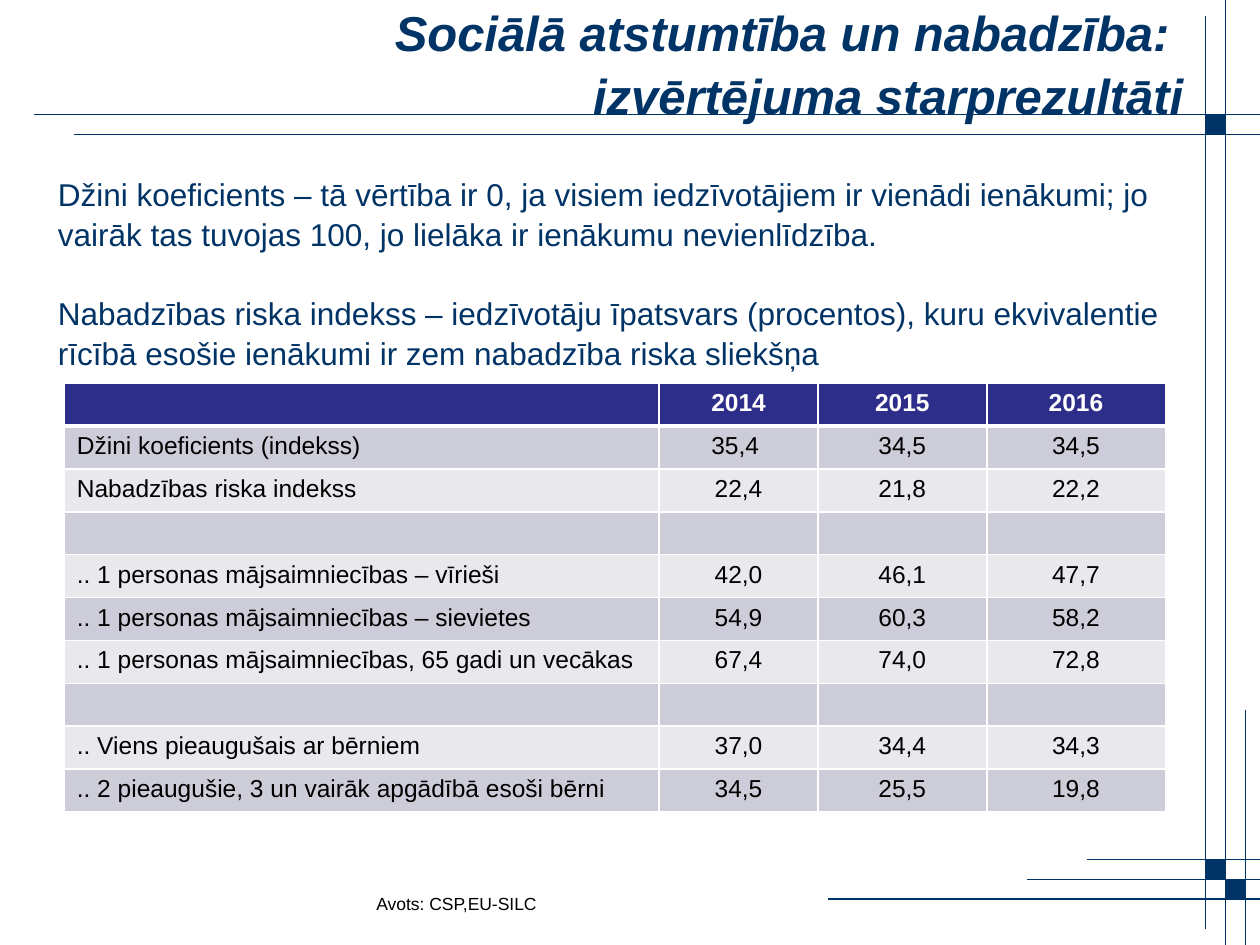
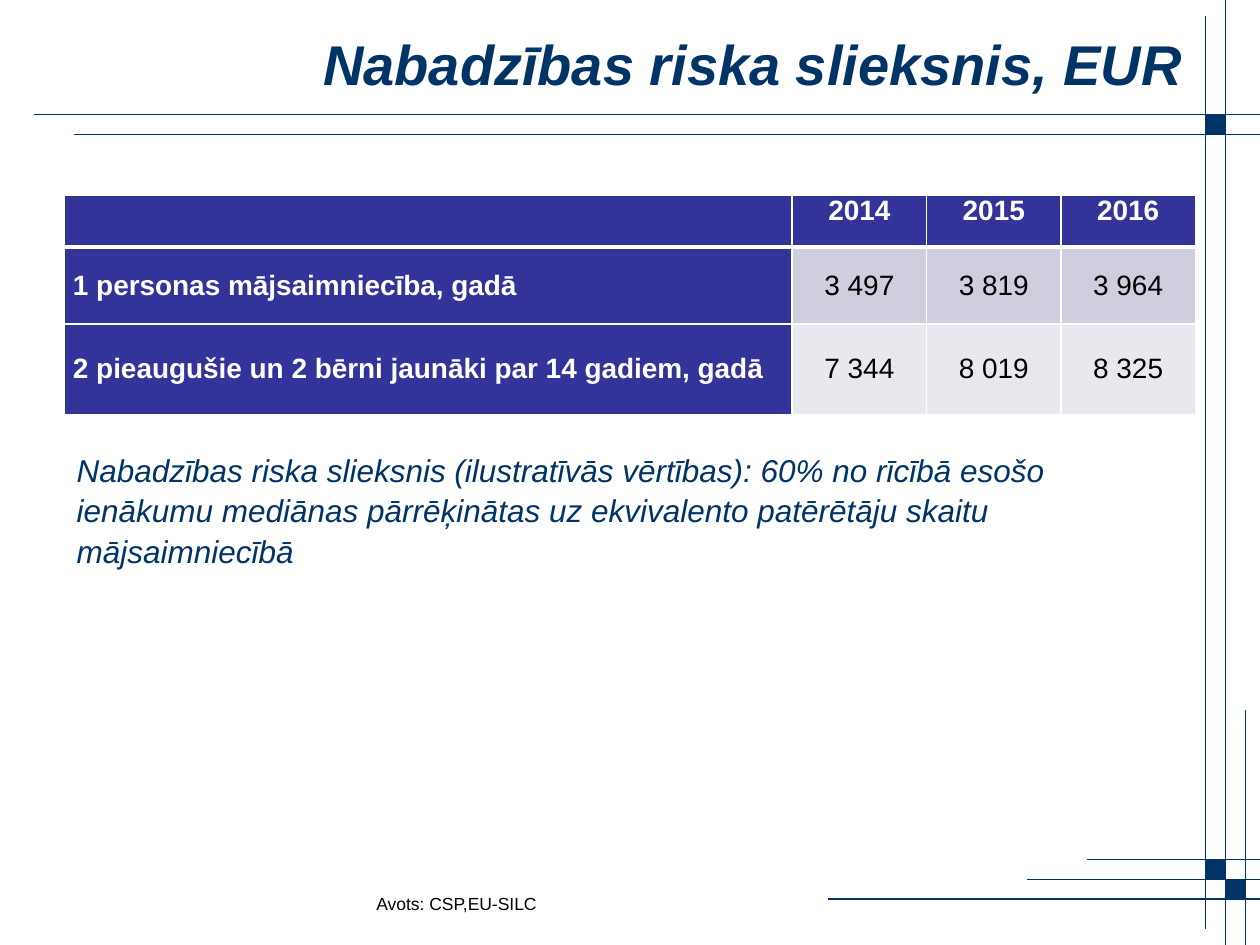
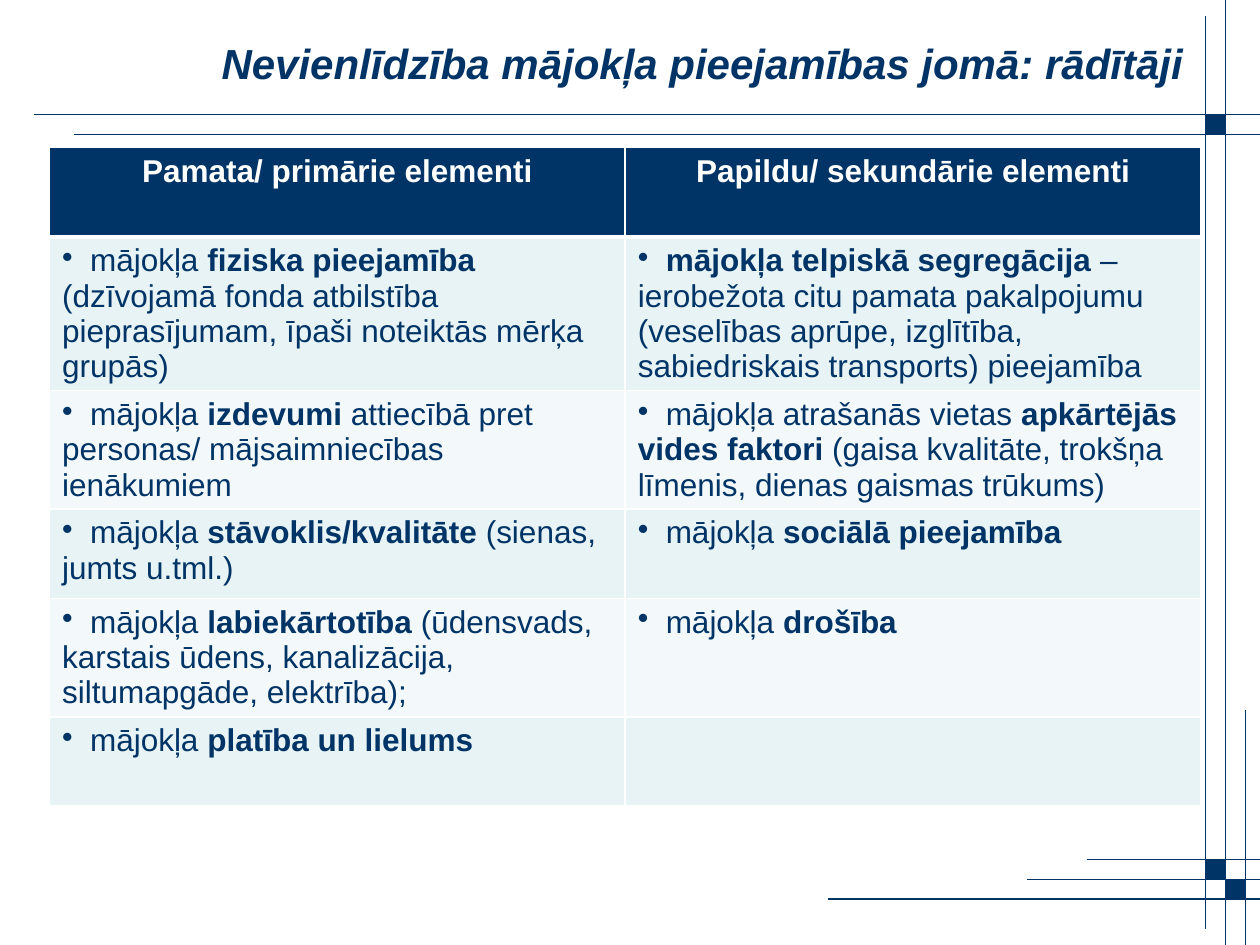
from lxml import etree
from pptx import Presentation
from pptx.dml.color import RGBColor
from pptx.enum.shapes import MSO_CONNECTOR, MSO_SHAPE
from pptx.enum.text import MSO_ANCHOR, MSO_AUTO_SIZE, PP_ALIGN
from pptx.oxml.ns import qn
from pptx.util import Pt

LEFT, CENTER, RIGHT, JUSTIFY = PP_ALIGN.LEFT, PP_ALIGN.CENTER, PP_ALIGN.RIGHT, PP_ALIGN.JUSTIFY
TOP, MIDDLE = MSO_ANCHOR.TOP, MSO_ANCHOR.MIDDLE
STRAIGHT, RECTANGLE = MSO_CONNECTOR.STRAIGHT, MSO_SHAPE.RECTANGLE
NO_AUTOFIT = MSO_AUTO_SIZE.NONE

FONT = "Arial"
NAVY = RGBColor(0x00, 0x33, 0x66)
BLACK = RGBColor(0x00, 0x00, 0x00)
WHITE = RGBColor(0xFF, 0xFF, 0xFF)
INDIGO = RGBColor(0x2D, 0x2D, 0x8A)
VIOLET = RGBColor(0x33, 0x33, 0x99)
INDIGO_BANDS = RGBColor(0xCD, 0xCD, 0xDA), RGBColor(0xE8, 0xE8, 0xED)
VIOLET_BANDS = RGBColor(0xCE, 0xCE, 0xDE), RGBColor(0xE8, 0xE8, 0xEF)
TEAL_BANDS = RGBColor(0xE7, 0xF3, 0xF4), RGBColor(0xF3, 0xF9, 0xFA)

WIDTH, HEIGHT = 720, 540
LINE_SPACING = 1.07
BULLET_GAP = 16

# Shared frame: lines as (x1, y1, x2, y2), squares as (x, y)
SQUARE = 11.4
X1, X2, X3 = (689 + SQUARE * i for i in range(3))
TOP1, TOP2 = 65.6, 77
LOW1, LOW2, LOW3 = (491 + SQUARE * i for i in range(3))
FRAME_LINES = [
    (19.5, TOP1, WIDTH, TOP1), (42.5, TOP2, WIDTH, TOP2),
    (X2, 0, X2, HEIGHT), (X1, 9, X1, 531),
    (587, LOW2, WIDTH, LOW2), (621, LOW1, WIDTH, LOW1),
    (473, LOW3, WIDTH, LOW3), (X3, 406, X3, HEIGHT),
]
FRAME_SQUARES = [(X1, TOP1), (X1, LOW1), (X2, LOW2)]

# Content
SOURCE = "Avots: CSP,EU-SILC"
YEARS = ["", "2014", "2015", "2016"]

EXCLUSION_TITLE = "Sociālā atstumtība un nabadzība: \vizvērtējuma starprezultāti"
DEFINITIONS = [
    "Džini koeficients – tā vērtība ir 0, ja visiem iedzīvotājiem ir vienādi ienākumi; "
    "jo vairāk tas tuvojas 100, jo lielāka ir ienākumu nevienlīdzība.",
    "Nabadzības riska indekss – iedzīvotāju īpatsvars (procentos), kuru ekvivalentie "
    "rīcībā esošie ienākumi ir zem nabadzība riska sliekšņa",
]
INDICATORS = [
    YEARS,
    ["Džini koeficients (indekss)", "35,4 ", "34,5", "34,5"],
    ["Nabadzības riska indekss", "22,4", "21,8", "22,2"],
    [""] * 4,
    [".. 1 personas mājsaimniecības – vīrieši", "42,0", "46,1", "47,7"],
    [".. 1 personas mājsaimniecības – sievietes", "54,9", "60,3", "58,2"],
    [".. 1 personas mājsaimniecības, 65 gadi un vecākas", "67,4", "74,0", "72,8"],
    [""] * 4,
    [".. Viens pieaugušais ar bērniem", "37,0", "34,4", "34,3"],
    [".. 2 pieaugušie, 3 un vairāk apgādībā esoši bērni", "34,5", "25,5", "19,8"],
]

THRESHOLD_TITLE = "Nabadzības riska slieksnis, EUR"
THRESHOLDS = [
    YEARS,
    ["1 personas mājsaimniecība, gadā", "3 497", "3 819", "3 964"],
    ["2 pieaugušie un 2 bērni jaunāki par 14 gadiem, gadā", "7 344", "8 019", "8 325"],
]
THRESHOLD_NOTE = (
    "Nabadzības riska slieksnis (ilustratīvās vērtības): 60% no rīcībā esošo ienākumu "
    "mediānas pārrēķinātas uz ekvivalento patērētāju skaitu mājsaimniecībā"
)

# Bulleted cells are tuples of runs: plain, bold, plain
HOUSING_TITLE = "Nevienlīdzība mājokļa pieejamības jomā: rādītāji"
HOUSING = [
    ["Pamata/ primārie elementi", "Papildu/ sekundārie elementi"],
    [("mājokļa ", "fiziska pieejamība ",
      "(dzīvojamā fonda atbilstība pieprasījumam, īpaši noteiktās mērķa grupās)"),
     ("", "mājokļa telpiskā segregācija ",
      "– ierobežota citu pamata pakalpojumu (veselības aprūpe, izglītība, "
      "sabiedriskais transports) pieejamība")],
    [("mājokļa", " izdevumi ", "attiecībā pret personas/ mājsaimniecības ienākumiem"),
     ("mājokļa atrašanās vietas ", "apkārtējās vides faktori ",
      "(gaisa kvalitāte, trokšņa līmenis, dienas gaismas trūkums)")],
    [("mājokļa", " stāvoklis/kvalitāte ", "(sienas, jumts u.tml.)"),
     ("mājokļa ", "sociālā pieejamība")],
    [("mājokļa", " labiekārtotība ",
      "(ūdensvads, karstais ūdens, kanalizācija, siltumapgāde, elektrība);"),
     ("mājokļa ", "drošība")],
    [("mājokļa ", "platība un lielums"), ""],
]


def set_font(paragraph, size, color, bold=None, italic=None):
    font = paragraph.font
    font.name, font.size, font.bold, font.italic = FONT, Pt(size), bold, italic
    font.color.rgb = color


def add_frame(slide):
    for x1, y1, x2, y2 in FRAME_LINES:
        rule = slide.shapes.add_connector(STRAIGHT, Pt(x1), Pt(y1), Pt(x2), Pt(y2))
        rule.line.color.rgb = NAVY
        rule.line.width = Pt(0.75)
        etree.SubElement(rule._element.spPr, qn("a:effectLst"))
    for x, y in FRAME_SQUARES:
        square = slide.shapes.add_shape(RECTANGLE, Pt(x), Pt(y), Pt(SQUARE), Pt(SQUARE))
        square.shadow.inherit = False
        square.fill.solid()
        square.fill.fore_color.rgb = NAVY
        square.line.color.rgb = NAVY
        square.line.width = Pt(0.75)


def add_slide(deck, heading, size):
    slide = deck.slides.add_slide(deck.slide_layouts[5])
    add_frame(slide)
    title = slide.shapes.title
    title.left, title.top, title.width, title.height = Pt(36.7), Pt(9.4), Pt(646.6), Pt(51)
    frame = title.text_frame
    frame.text = heading
    frame.word_wrap = True
    frame.auto_size = NO_AUTOFIT
    frame.vertical_anchor = MIDDLE
    paragraph = frame.paragraphs[0]
    paragraph.alignment = RIGHT
    paragraph.line_spacing = LINE_SPACING
    set_font(paragraph, size, NAVY, bold=True, italic=True)
    return slide


def add_text(slide, box, texts, size, color, italic=None, gap=0):
    frame = slide.shapes.add_textbox(*map(Pt, box)).text_frame
    frame.word_wrap = True
    for i, text in enumerate(texts):
        paragraph = frame.add_paragraph() if i else frame.paragraphs[0]
        paragraph.text = text
        paragraph.line_spacing = LINE_SPACING
        if i:
            paragraph.space_before = Pt(gap)
        set_font(paragraph, size, color, italic=italic)


def add_source(slide):
    add_text(slide, (208, 506, 208, 19.4), [SOURCE], 10, BLACK)


def add_borders(cell, top, bottom):
    properties = cell._tc.get_or_add_tcPr()
    for side, width in (("L", 1), ("R", 1), ("T", top), ("B", bottom)):
        border = etree.SubElement(properties, qn(f"a:ln{side}"), w=str(Pt(width)))
        fill = etree.SubElement(border, qn("a:solidFill"))
        etree.SubElement(fill, qn("a:srgbClr"), val=str(WHITE))


def add_bullet(paragraph, runs):
    properties = paragraph._p.get_or_add_pPr()
    properties.set("marL", "0")
    properties.set("indent", "0")
    etree.SubElement(properties, qn("a:buChar"), char="•")
    tabs = etree.SubElement(properties, qn("a:tabLst"))
    etree.SubElement(tabs, qn("a:tab"), pos=str(Pt(BULLET_GAP)), algn="l")
    for i, text in enumerate(("\t" + runs[0], *runs[1:])):
        run = paragraph.add_run()
        run.text = text
        run.font.bold = i == 1


def add_grid(slide, left, top, widths, heights, rows, size, header, bands, color,
             aligns, header_column=False, margins=None, anchor=TOP):
    grid = slide.shapes.add_table(len(rows), len(widths), Pt(left), Pt(top),
                                  Pt(sum(widths)), Pt(sum(heights))).table
    grid.horz_banding = False
    for column, width in zip(grid.columns, widths):
        column.width = Pt(width)
    for r, (row, height) in enumerate(zip(rows, heights)):
        grid.rows[r].height = Pt(height)
        for c, content in enumerate(row):
            cell = grid.cell(r, c)
            is_header = r == 0 or (header_column and c == 0)
            add_borders(cell, 3 if r == 1 else 1, 3 if r == 0 else 1)
            cell.fill.solid()
            cell.fill.fore_color.rgb = header if is_header else bands[(r - 1) % 2]
            cell.vertical_anchor = anchor if r else TOP
            if margins:
                cell.margin_left = cell.margin_right = Pt(margins[0])
                cell.margin_top = cell.margin_bottom = Pt(margins[1])
            paragraph = cell.text_frame.paragraphs[0]
            if isinstance(content, tuple):
                add_bullet(paragraph, content)
            elif content:
                paragraph.text = content
            else:
                paragraph._p.get_or_add_endParaRPr().set("sz", str(size * 100))
            paragraph.alignment = aligns[c] if r else CENTER
            set_font(paragraph, size, WHITE if is_header else color, bold=is_header)


def main():
    deck = Presentation()
    deck.slide_width, deck.slide_height = Pt(WIDTH), Pt(HEIGHT)

    # Exclusion and poverty indicators
    slide = add_slide(deck, EXCLUSION_TITLE, 28)
    add_text(slide, (26, 95, 656.6, 116.6), DEFINITIONS, 18, NAVY, gap=21.6)
    add_grid(slide, 36.7, 219, [340, 90.7, 96.5, 102], [24.5] * len(INDICATORS),
             INDICATORS, 14, INDIGO, INDIGO_BANDS, BLACK, [LEFT] + [CENTER] * 3)
    add_source(slide)

    # Poverty risk threshold
    slide = add_slide(deck, THRESHOLD_TITLE, 32)
    add_grid(slide, 36.7, 111.6, [416] + [76.8] * 3, [29.5, 44, 51.8],
             THRESHOLDS, 16, VIOLET, VIOLET_BANDS, BLACK, [JUSTIFY] + [CENTER] * 3,
             header_column=True, margins=(5, 0), anchor=MIDDLE)
    add_text(slide, (36.7, 252.7, 646.6, 72.7), [THRESHOLD_NOTE], 18, NAVY, italic=True)
    add_source(slide)

    # Housing access elements
    slide = add_slide(deck, HOUSING_TITLE, 24)
    add_grid(slide, 28.3, 84.4, [329] * 2, [51, 55.4, 56, 51, 51, 51],
             HOUSING, 18, NAVY, TEAL_BANDS, NAVY, [LEFT] * 2)

    deck.save("out.pptx")


if __name__ == "__main__":
    main()
